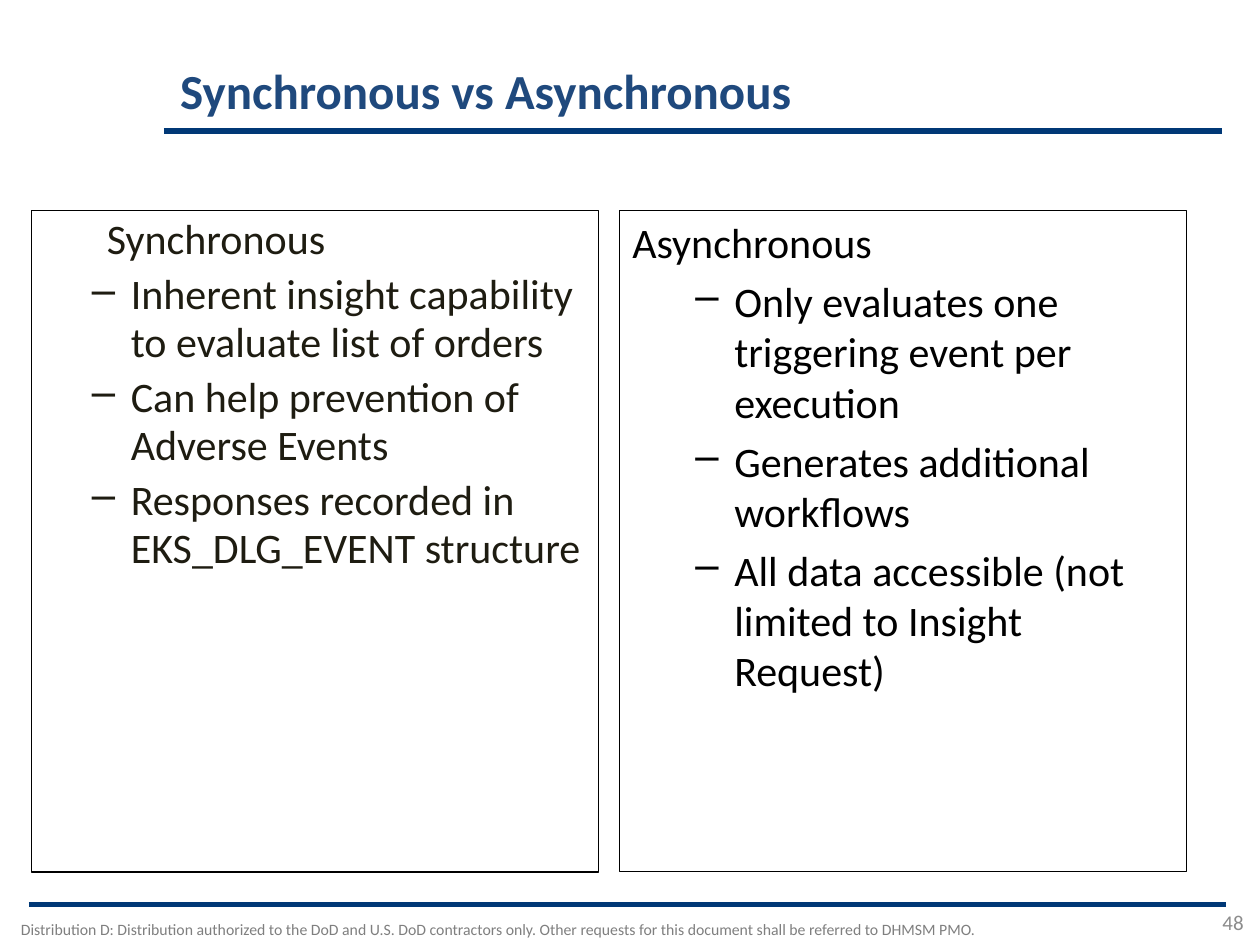
from lxml import etree
from pptx import Presentation
from pptx.dml.color import RGBColor
from pptx.enum.shapes import MSO_CONNECTOR, MSO_SHAPE
from pptx.enum.text import MSO_ANCHOR, MSO_AUTO_SIZE, PP_ALIGN
from pptx.oxml.ns import qn
from pptx.util import Inches, Pt

LEFT, CENTER, RIGHT = PP_ALIGN.LEFT, PP_ALIGN.CENTER, PP_ALIGN.RIGHT
TOP, BOTTOM = MSO_ANCHOR.TOP, MSO_ANCHOR.BOTTOM
STRAIGHT, RECTANGLE = MSO_CONNECTOR.STRAIGHT, MSO_SHAPE.RECTANGLE
TITLE_ONLY = 5
FONT = "Calibri"
NAVY, BLUE, BLACK, DARK = "003876", "1F497D", "000000", "1E1C11"
GRAY, LIGHT_GRAY = "7F7F7F", "8C8C8C"

PANEL_LEFT, PANEL_TOP = 0.25, 1.67
PANEL_WIDTH, PANEL_HEIGHT, PANEL_GAP = 4.5, 5.25, 0.17
PANELS = [
    {
        "heading": "Synchronous",
        "points": [
            "Inherent insight capability to evaluate list of orders",
            "Can help prevention of Adverse Events",
            "Responses recorded in EKS_DLG_EVENT structure",
        ],
        "color": DARK, "line_width": 1, "heading_indent": 0.5,
        "point_indent": 0.69, "format": {"line_spacing": 0.95, "space_before": Pt(4)},
    },
    {
        "heading": "Asynchronous",
        "points": [
            "Only evaluates one triggering event per execution",
            "Generates additional workflows",
            "All data accessible (not limited to Insight Request)",
        ],
        "color": BLACK, "line_width": 0.5, "heading_indent": 0,
        "point_indent": 0.81, "format": {"line_spacing": 1.0, "space_before": Pt(4.8)},
    },
]


def rgb(color):
    return RGBColor.from_string(color)


def set_attributes(target, values):
    for name, value in values.items():
        setattr(target, name, value)


def format_font(font, size, color, bold=False):
    set_attributes(font, {"name": FONT, "size": Pt(size), "bold": bold})
    font.color.rgb = rgb(color)


def indent(paragraph, margin, first_line=0.0, bullet=None):
    """Set the indents in inches and, if given, the bullet character."""
    properties = paragraph._p.get_or_add_pPr()
    properties.set("marL", str(Inches(margin)))
    properties.set("indent", str(Inches(first_line)))
    if bullet:
        etree.SubElement(properties, qn("a:buChar")).set("char", bullet)


def add_rule(slide, left, top, width):
    rule = slide.shapes.add_connector(
        STRAIGHT, Inches(left), Inches(top), Inches(left + width), Inches(top))
    rule.line.color.rgb = rgb(NAVY)
    rule.line.width = Pt(3)
    etree.SubElement(rule._element.spPr, qn("a:effectLst"))


def fill_line(shape, text, size, color, alignment, anchor, bold=False):
    """Put one formatted line of text into a shape."""
    frame = shape.text_frame
    set_attributes(frame, {"word_wrap": True, "vertical_anchor": anchor,
                           "auto_size": MSO_AUTO_SIZE.NONE})
    paragraph = frame.paragraphs[0]
    paragraph.text = text
    paragraph.alignment = alignment
    format_font(paragraph.font, size, color, bold)
    return paragraph


def add_header(slide, left, top, width, height):
    title = slide.shapes.title
    set_attributes(title, {"left": Inches(left), "top": Inches(top),
                           "width": Inches(width), "height": Inches(height)})
    paragraph = fill_line(title, "Synchronous vs Asynchronous", 28, BLUE, LEFT, BOTTOM, True)
    paragraph.line_spacing = 0.9
    add_rule(slide, left - 0.03, top + height + 0.04, 8.4)


def add_panel(slide, panel, left, top, width, height):
    """Draw a bordered box with a heading and dashed points."""
    box = slide.shapes.add_shape(
        RECTANGLE, Inches(left), Inches(top), Inches(width), Inches(height))
    box.shadow.inherit = False
    box.fill.background()
    box.line.color.rgb = rgb(BLACK)
    box.line.width = Pt(panel["line_width"])
    heading = fill_line(box, panel["heading"], 24, panel["color"], LEFT, TOP)
    indent(heading, panel["heading_indent"])
    heading.line_spacing = panel["format"]["line_spacing"]
    for point in panel["points"]:
        paragraph = box.text_frame.add_paragraph()
        paragraph.text = point
        paragraph.level = 1
        indent(paragraph, panel["point_indent"], -0.31, "–")
        set_attributes(paragraph, {"alignment": LEFT, **panel["format"]})
        format_font(paragraph.font, 24, panel["color"])


def add_footer(slide, top):
    add_rule(slide, 0.23, top, 9.5)
    notice = slide.shapes.add_textbox(
        Inches(0), Inches(top + 0.07), Inches(7.9), Inches(0.25))
    fill_line(notice, "Distribution D: Distribution authorized to the DoD and U.S. DoD "
              "contractors only. Other requests for this document shall be referred "
              "to DHMSM PMO.", 9, GRAY, CENTER, TOP)
    number = slide.shapes.add_textbox(
        Inches(9.14), Inches(top - 0.02), Inches(0.83), Inches(0.31))
    fill_line(number, "48", 12, LIGHT_GRAY, RIGHT, BOTTOM)


def main():
    presentation = Presentation()
    presentation.slide_width = Inches(10)
    presentation.slide_height = Inches(7.5)
    slide = presentation.slides.add_slide(presentation.slide_layouts[TITLE_ONLY])
    add_footer(slide, 7.18)
    add_header(slide, 1.33, 0.47, 8.25, 0.53)
    for column, panel in enumerate(PANELS):
        left = PANEL_LEFT + column * (PANEL_WIDTH + PANEL_GAP)
        add_panel(slide, panel, left, PANEL_TOP, PANEL_WIDTH, PANEL_HEIGHT)
    presentation.save("out.pptx")


if __name__ == "__main__":
    main()
